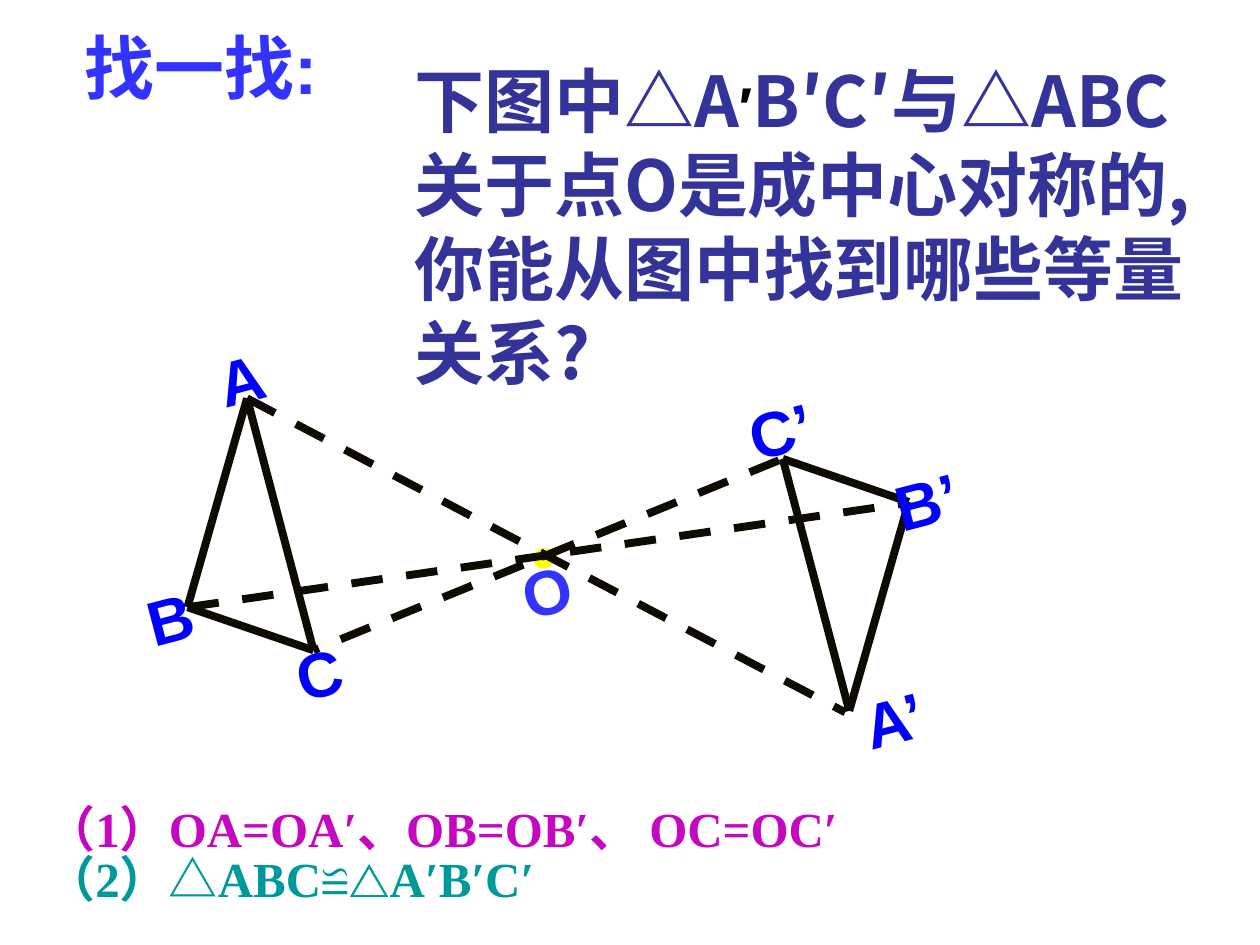
from lxml import etree
from pptx import Presentation
from pptx.dml.color import RGBColor
from pptx.enum.dml import MSO_LINE
from pptx.enum.shapes import MSO_CONNECTOR, MSO_SHAPE
from pptx.enum.text import MSO_ANCHOR, MSO_AUTO_SIZE, PP_ALIGN
from pptx.oxml.ns import qn
from pptx.util import Cm, Pt

STRAIGHT = MSO_CONNECTOR.STRAIGHT
OVAL = MSO_SHAPE.OVAL
DASH = MSO_LINE.DASH
TOP = MSO_ANCHOR.TOP
LEFT, CENTER = PP_ALIGN.LEFT, PP_ALIGN.CENTER

CJK_FONT = "Noto Sans CJK SC"
INK = "0E0C02"
TILT = 345.3
LINE_FACTOR = 1.2

TITLE = "找一找:"
QUESTION = [
    ("下图中△A", {}),
    ("′", {"size": 32, "font": "Arial", "color": "000000"}),
    ("B′C′与△ABC关于点O是成中心对称的,你能从图中找到哪些等量关系?", {}),
]
# text, top in cm, colour
ANSWERS = [
    ("（1）OA=OA′、OB=OB′、 OC=OC′", 15.98, "C507C0"),
    ("（2）△ABC≌△A′B′C′", 16.99, "009999"),
]

# Positions in cm
CENTRE = (11.05, 11.18)
TRIANGLE = {"A": (4.98, 8.03), "B": (3.78, 12.24), "C": (6.32, 13.11)}
DASH_OFFSET = (-0.08, 0.03)
LABELS = [
    ("A’", 17.09, 13.59, "0000FF"),
    ("B’", 17.75, 9.19, "0000FF"),
    ("C’", 14.81, 7.77, "0000FF"),
    ("A", 3.94, 6.73, "0000FF"),
    ("B", 2.51, 11.56, "0000FF"),
    ("C", 5.51, 12.67, "0000FF"),
    ("O", 10.11, 11.0, "3333FF"),
]


def rgb(color):
    return RGBColor.from_string(color)


def place(shape, left, top, width, height):
    shape.left, shape.top = Cm(left), Cm(top)
    shape.width, shape.height = Cm(width), Cm(height)


def write(shape, runs, size, font, color, align=LEFT, line_spacing=None):
    """Fill a shape with one bold paragraph; runs is text or (text, overrides) pairs."""
    frame = shape.text_frame
    frame.word_wrap = True
    frame.auto_size = MSO_AUTO_SIZE.NONE
    frame.vertical_anchor = TOP
    paragraph = frame.paragraphs[0]
    paragraph.alignment = align
    paragraph.space_before = Pt(0)
    if line_spacing:
        paragraph.line_spacing = Pt(line_spacing)
    for text, changes in [(runs, {})] if isinstance(runs, str) else runs:
        style = {"size": size, "font": font, "color": color, **changes}
        run = paragraph.add_run()
        run.text = text
        run.font.size = Pt(style["size"])
        run.font.bold = True
        run.font.name = style["font"]
        run.font.color.rgb = rgb(style["color"])
        east_asian = etree.SubElement(run.font._element, qn("a:ea"))
        east_asian.set("typeface", CJK_FONT)
    return paragraph


def remove_bullet(paragraph):
    properties = paragraph._p.get_or_add_pPr()
    properties.set("marL", "0")
    properties.set("indent", "0")
    etree.SubElement(properties, qn("a:buNone"))


def add_line(slide, start, end, dash=None):
    line = slide.shapes.add_connector(STRAIGHT, *map(Cm, start + end))
    line.line.color.rgb = rgb(INK)
    line.line.width = Pt(4.5)
    if dash is not None:
        line.line.dash_style = dash
    etree.SubElement(line._element.spPr, qn("a:effectLst"))


def mirror(point):
    """Return the image of a point under the half turn about the centre."""
    return tuple(2 * c - p for c, p in zip(CENTRE, point))


def add_figure(slide):
    a, b, c = TRIANGLE.values()
    for start, end in [(a, c), (c, b), (b, a)]:
        add_line(slide, mirror(start), mirror(end))
        add_line(slide, start, end)

    dot = slide.shapes.add_shape(OVAL, Cm(10.82), Cm(11.13), Cm(0.28), Cm(0.25))
    dot.rotation = TILT
    dot.shadow.inherit = False
    dot.fill.solid()
    dot.fill.fore_color.rgb = rgb("000000")
    dot.line.color.rgb = rgb("FFFF00")
    dot.line.width = Pt(4.5)

    for name in "CAB":
        point = TRIANGLE[name]
        image = tuple(m + d for m, d in zip(mirror(point), DASH_OFFSET))
        ends = (image, point) if name == "C" else (point, image)
        add_line(slide, *ends, dash=DASH)

    for text, left, top, color in LABELS:
        label = slide.shapes.add_textbox(Cm(left), Cm(top), Cm(1.85), Cm(1.78))
        label.rotation = TILT
        write(label, text, size=36, font="Arial", color=color, align=CENTER)


def main():
    presentation = Presentation()
    presentation.slide_width, presentation.slide_height = Cm(25.4), Cm(19.05)
    slide = presentation.slides.add_slide(presentation.slide_layouts[1])
    title, body = slide.placeholders

    place(title, 1.45, 0.36, 4.8, 3.6)
    write(title, TITLE, size=40, font="Arial", color="3333FF",
          line_spacing=40 * LINE_FACTOR)

    place(body, 8.1, 1.04, 16.61, 7.06)
    paragraph = write(body, QUESTION, size=40, font=CJK_FONT, color="333399",
                      line_spacing=40 * LINE_FACTOR)
    remove_bullet(paragraph)

    add_figure(slide)

    for text, top, color in ANSWERS:
        answer = slide.shapes.add_textbox(Cm(0.69), Cm(top), Cm(21), Cm(1.45))
        write(answer, text, size=28, font="Times New Roman", color=color,
              line_spacing=28 * LINE_FACTOR)

    presentation.save("out.pptx")


if __name__ == "__main__":
    main()
